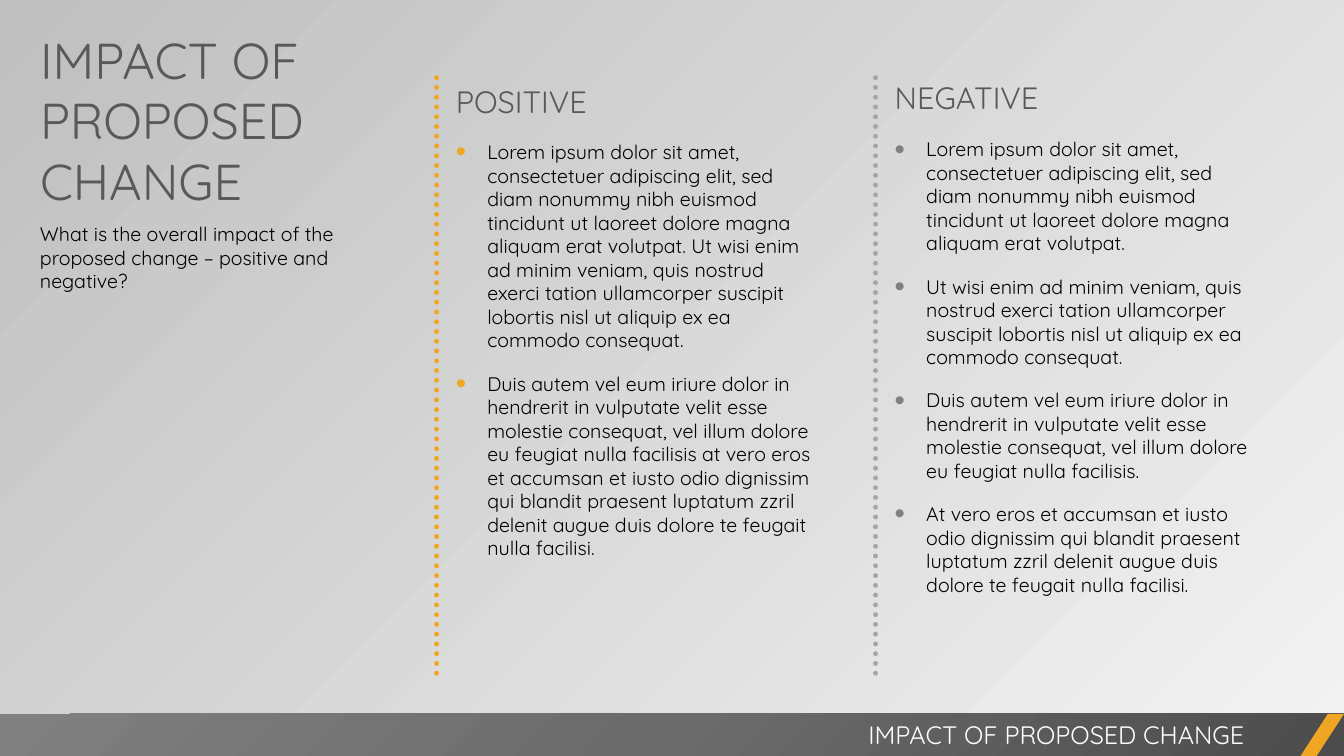
from pptx import Presentation, oxml
from pptx import util as u
from pptx.dml.color import RGBColor
from pptx.enum import dml, shapes, text
from pptx.oxml import ns

COLORS = {"orange": "F0A622", "gray": "808080", "dots": "A6A6A6",
          "heading": "595959", "black": "000000", "white": "FFFFFF",
          "light": "F2F2F2", "silver": "BFBFBF",
          "bar_dark": "4C4C4C", "bar_mid": "6B6B6B"}
FONT = "Quicksand"


def rgb(name):
    return RGBColor.from_string(COLORS[name])


def add_text(box, paragraphs, size, color, bullet=None, **formats):
    tf = s.shapes.add_textbox(*map(u.Pt, box)).text_frame
    tf.word_wrap = True
    tf.auto_size = text.MSO_AUTO_SIZE.SHAPE_TO_FIT_TEXT
    for i, line in enumerate(paragraphs):
        p = tf.paragraphs[0] if i == 0 else tf.add_paragraph()
        for name, value in formats.items():
            setattr(p, name, value)
        r = p.add_run()
        r.text = line
        for name, value in {"size": u.Pt(size), "name": FONT}.items():
            setattr(r.font, name, value)
        r.font.color.rgb = rgb(color)
        if bullet:
            pPr = p._p.get_or_add_pPr()
            pPr.set("marL", str(u.Pt(22.5)))
            pPr.set("indent", str(u.Pt(-22.5)))
            clr = oxml.parse_xml(f'<a:buClr {ns.nsdecls("a")}><a:srgbClr val="{COLORS[bullet]}"/></a:buClr>')
            pPr.append(clr)
            for tag, attr, value in [("buSzPct", "val", "150000"),
                                     ("buFont", "typeface", "Arial"),
                                     ("buChar", "char", "•")]:
                pPr.append(oxml.parse_xml(f'<a:{tag} {ns.nsdecls("a")} {attr}="{value}"/>'))


prs = Presentation()
prs.slide_width, prs.slide_height = u.Pt(960), u.Pt(540)
s = prs.slides.add_slide(prs.slide_layouts[6])

bg = s.background.fill
bg.gradient()
bg.gradient_angle = 135
for stop, color, position in zip(bg.gradient_stops, ("light", "silver"), (0, 1)):
    stop.color.rgb = rgb(color)
    stop.position = position

bar = s.shapes.add_shape(shapes.MSO_SHAPE.RECTANGLE, 0, u.Pt(510), u.Pt(960), u.Pt(30))
stops = "".join(f'<a:gs pos="{pos}"><a:srgbClr val="{COLORS[c]}"/></a:gs>'
                for pos, c in [(0, "bar_dark"), (50000, "bar_mid"), (100000, "gray")])
bar._element.spPr.insert(2, oxml.parse_xml(
    f'<a:gradFill {ns.nsdecls("a")} rotWithShape="1"><a:gsLst>{stops}</a:gsLst>'
    '<a:path path="circle"><a:fillToRect l="100000" t="100000"/></a:path></a:gradFill>'))
slash = s.shapes.add_shape(shapes.MSO_SHAPE.PARALLELOGRAM,
                           u.Pt(929), u.Pt(510), u.Pt(31), u.Pt(30))
slash.adjustments[0] = 0.65
slash.fill.solid()
slash.fill.fore_color.rgb = rgb("orange")
for sp in (bar, slash):
    sp.line.fill.background()
    sp.shadow.inherit = False

TITLE = "IMPACT OF PROPOSED CHANGE"
add_text((378, 510, 518, 29), [TITLE], 18, "white", alignment=text.PP_ALIGN.RIGHT)
add_text((21.5, 17, 290, 138), [TITLE], 36, "heading")
add_text((21.5, 155, 274, 58),
         ["What is the overall impact of the proposed change – positive and negative?"],
         14, "black", space_before=u.Pt(14))

columns = [
    ("POSITIVE", 312, 55.5, 96.5, 310, "orange", "orange", [
        "Lorem ipsum dolor sit amet, consectetuer adipiscing elit, sed diam nonummy nibh euismod "
        "tincidunt ut laoreet dolore magna aliquam erat volutpat. Ut wisi enim ad minim veniam, quis "
        "nostrud exerci tation ullamcorper suscipit lobortis nisl ut aliquip ex ea commodo consequat.",
        "Duis autem vel eum iriure dolor in hendrerit in vulputate velit esse molestie consequat, vel "
        "illum dolore eu feugiat nulla facilisis at vero eros et accumsan et iusto odio dignissim qui "
        "blandit praesent luptatum zzril delenit augue duis dolore te feugait nulla facilisi."]),
    ("NEGATIVE", 625.5, 52.5, 94.5, 338, "gray", "dots", [
        "Lorem ipsum dolor sit amet, consectetuer adipiscing elit, sed diam nonummy nibh euismod "
        "tincidunt ut laoreet dolore magna aliquam erat volutpat.",
        "Ut wisi enim ad minim veniam, quis nostrud exerci tation ullamcorper suscipit lobortis nisl "
        "ut aliquip ex ea commodo consequat.",
        "Duis autem vel eum iriure dolor in hendrerit in vulputate velit esse molestie consequat, vel "
        "illum dolore eu feugiat nulla facilisis.",
        "At vero eros et accumsan et iusto odio dignissim qui blandit praesent luptatum zzril delenit "
        "augue duis dolore te feugait nulla facilisi."]),
]
for heading, x, head_y, body_y, body_h, bullet, dots, points in columns:
    add_text((x + 6.5, body_y, 274, body_h), points, 14, "black", bullet, space_before=u.Pt(14))
    add_text((x + 6.5, head_y, 290, 34), [heading], 22, "heading")
    rule = s.shapes.add_connector(shapes.MSO_CONNECTOR.STRAIGHT,
                                  u.Pt(x), u.Pt(55.5), u.Pt(x), u.Pt(487.5))
    rule.line.color.rgb = rgb(dots)
    for name, value in {"width": u.Pt(3.5), "dash_style": dml.MSO_LINE.ROUND_DOT}.items():
        setattr(rule.line, name, value)
    rule.line._get_or_add_ln().set("cap", "rnd")
    rule._element.spPr.append(oxml.parse_xml(f'<a:effectLst {ns.nsdecls("a")}/>'))

prs.save("out.pptx")
